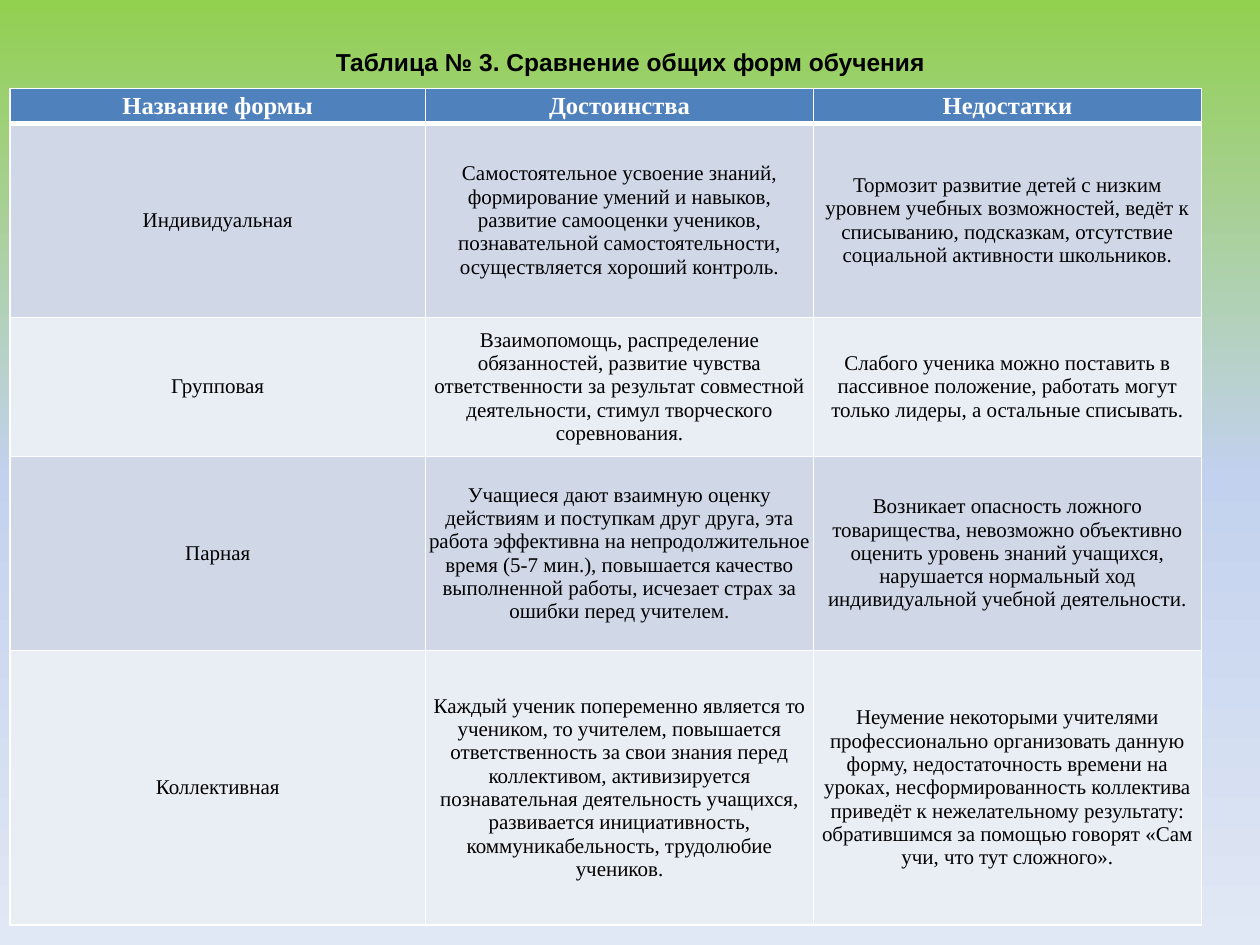
import copy
import dataclasses

import pptx
import pptx.dml.color
import pptx.enum.text
import pptx.oxml
import pptx.oxml.ns
import pptx.util

Cm = pptx.util.Cm
Pt = pptx.util.Pt


@dataclasses.dataclass(frozen=True)
class Theme:
    sky: tuple = ((0, "92D050"), (0.5, "C2D1ED"), (1, "E1E8F5"))
    head: str = "4F81BD"
    bands: tuple = ("D0D8E8", "E9EDF4")
    light: str = "FFFFFF"
    dark: str = "000000"
    sans: str = "Arial"
    serif: str = "Times New Roman"
    large: int = 14
    small: int = 12
    thin: int = 1
    thick: int = 3


TITLE = "Таблица № 3. Сравнение общих форм обучения"
ROWS = [
    ("Название формы", "Достоинства", "Недостатки"),
    (
        "Индивидуальная",
        "Самостоятельное усвоение знаний, формирование умений и навыков, "
        "развитие самооценки учеников, познавательной самостоятельности, "
        "осуществляется хороший контроль.",
        "Тормозит развитие детей с низким уровнем учебных возможностей, "
        "ведёт к списыванию, подсказкам, отсутствие социальной активности "
        "школьников.",
    ),
    (
        "Групповая",
        "Взаимопомощь, распределение обязанностей, развитие чувства "
        "ответственности за результат совместной деятельности, стимул "
        "творческого соревнования.",
        "Слабого ученика можно поставить в пассивное положение, работать "
        "могут только лидеры, а остальные списывать.",
    ),
    (
        "Парная",
        "Учащиеся дают взаимную оценку действиям и поступкам друг друга, эта "
        "работа эффективна на непродолжительное время (5-7 мин.), повышается "
        "качество выполненной работы, исчезает страх за ошибки перед учителем.",
        "Возникает опасность ложного товарищества, невозможно объективно "
        "оценить уровень знаний учащихся, нарушается нормальный ход "
        "индивидуальной учебной деятельности.",
    ),
    (
        "Коллективная",
        "Каждый ученик попеременно является то учеником, то учителем, "
        "повышается ответственность за свои знания перед коллективом, "
        "активизируется познавательная деятельность учащихся, развивается "
        "инициативность, коммуникабельность, трудолюбие учеников.",
        "Неумение некоторыми учителями профессионально организовать данную "
        "форму, недостаточность времени на уроках, несформированность "
        "коллектива приведёт к нежелательному результату: обратившимся за "
        "помощью говорят «Сам учи, что тут сложного».",
    ),
]
WIDTHS = (8.38, 7.82, 7.82)
HEIGHTS = (0.71, 3.91, 2.8, 3.91, 5.54)


def tint(code):
    return pptx.dml.color.RGBColor.from_string(code)


def write(frame, text, *, size, font, color, bold=False):
    """Put one centred paragraph into a text frame."""
    para = frame.paragraphs[0]
    para.alignment = pptx.enum.text.PP_ALIGN.CENTER
    run = para.add_run()
    run.text = text
    run.font.size = Pt(size)
    run.font.name = font
    run.font.bold = bold
    run.font.color.rgb = tint(color)


def edge(cell, sides, color):
    """Draw cell borders; sides gives the widths in left, right, top, bottom order."""
    props = cell._tc.get_or_add_tcPr()
    for spot, (side, width) in enumerate(zip("LRTB", sides)):
        line = pptx.oxml.parse_xml(
            f'<a:ln{side} {pptx.oxml.ns.nsdecls("a")} w="{Pt(width)}">'
            f'<a:solidFill><a:srgbClr val="{color}"/></a:solidFill></a:ln{side}>'
        )
        props.insert(spot, line)


class Page:
    def __init__(self, slide, theme):
        self.slide = slide
        self.theme = theme

    def shade(self):
        """Fill the background from top to bottom."""
        fill = self.slide.background.fill
        fill.gradient()
        fill.gradient_angle = 270
        stops = self.slide.element.xpath(".//p:bg//a:gsLst")[0]
        stops.append(copy.deepcopy(stops[-1]))
        for stop, (place, code) in zip(fill.gradient_stops, self.theme.sky):
            stop.position = place
            stop.color.rgb = tint(code)

    def title(self, text, left, top, width, height):
        shape = self.slide.shapes.title
        shape.left, shape.top = Cm(left), Cm(top)
        shape.width, shape.height = Cm(width), Cm(height)
        frame = shape.text_frame
        frame.vertical_anchor = pptx.enum.text.MSO_ANCHOR.TOP
        frame.margin_top = Cm(0.15)
        write(frame, text, size=self.theme.large, font=self.theme.sans,
              color=self.theme.dark, bold=True)

    def table(self, rows, left, top, widths, heights):
        grid = self.slide.shapes.add_table(
            len(rows), len(widths), Cm(left), Cm(top),
            Cm(sum(widths)), Cm(sum(heights)),
        ).table
        for col, width in zip(grid.columns, widths):
            col.width = Cm(width)
        for row, height in zip(grid.rows, heights):
            row.height = Cm(height)
        for i, texts in enumerate(rows):
            for j, text in enumerate(texts):
                self.cell(grid.cell(i, j), text, i)

    def cell(self, cell, text, row):
        look = self.theme
        head = row == 0
        cell.fill.solid()
        cell.fill.fore_color.rgb = tint(look.head if head else look.bands[(row - 1) % 2])
        cell.vertical_anchor = pptx.enum.text.MSO_ANCHOR.MIDDLE
        cell.margin_left = cell.margin_right = Cm(0.03)
        cell.margin_top = cell.margin_bottom = Cm(0.03)
        above = look.thick if row == 1 else look.thin
        below = look.thick if head else look.thin
        edge(cell, (look.thin, look.thin, above, below), look.light)
        write(cell.text_frame, text, font=look.serif, bold=head,
              size=look.large if head else look.small,
              color=look.light if head else look.dark)


def main():
    deck = pptx.Presentation()
    deck.slide_width, deck.slide_height = Cm(25.4), Cm(19.05)
    page = Page(deck.slides.add_slide(deck.slide_layouts[5]), Theme())
    page.shade()
    page.title(TITLE, 2.59, 0.79, 20.24, 1.63)
    page.table(ROWS, 0.2, 1.78, WIDTHS, HEIGHTS)
    deck.save("out.pptx")


if __name__ == "__main__":
    main()
